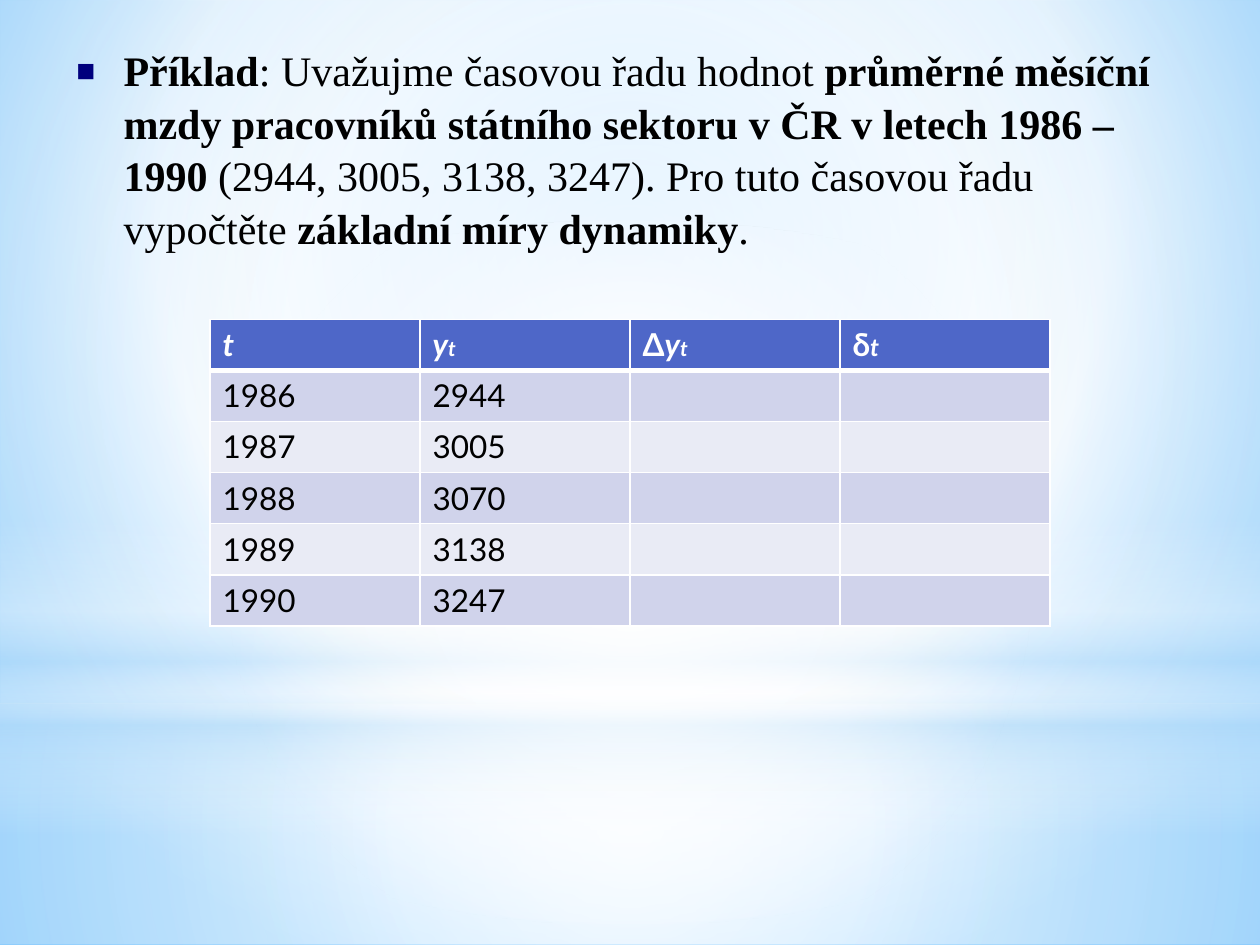
from lxml import etree
from pptx import Presentation
from pptx.dml.color import RGBColor
from pptx.enum.shapes import MSO_SHAPE
from pptx.oxml import parse_xml
from pptx.oxml.ns import nsdecls, qn
from pptx.util import Pt

RECT = MSO_SHAPE.RECTANGLE
OVAL = MSO_SHAPE.OVAL
WHITE = RGBColor(0xFF, 0xFF, 0xFF)
BLACK = RGBColor(0, 0, 0)
NAVY = RGBColor(0, 0, 0x7D)
BLUE = RGBColor(0x4E, 0x67, 0xC8)
DARK = RGBColor(0xD0, 0xD3, 0xEB)
LIGHT = RGBColor(0xE9, 0xEB, 0xF5)
PALE = RGBColor(0xB4, 0xDC, 0xFA)
SKY = RGBColor(0x9E, 0xD5, 0xFF)
DEEP = RGBColor(0x5B, 0xB9, 0xFF)
MID = (50, 50, 50, 50)

INTRO = [
    ("Příklad", True),
    (": Uvažujme časovou řadu hodnot ", False),
    ("průměrné měsíční mzdy pracovníků státního sektoru v ČR v letech 1986 – 1990 ", True),
    ("(2944, 3005, 3138, 3247). Pro tuto časovou řadu vypočtěte ", False),
    ("základní míry dynamiky", True),
    (".", False),
]
HEADS = [
    [("t", 18, True)],
    [("y", 18, True), ("t", 12, True)],
    [("Δ", 18, False), ("y", 18, True), ("t", 12, True)],
    [("δ", 18, False), ("t", 14, True)],
]
WAGES = [(1986, 2944), (1987, 3005), (1988, 3070), (1989, 3138), (1990, 3247)]


class Deck:
    serif = "Times New Roman"
    sans = "Lato"

    def __init__(self):
        self.prs = Presentation()
        self.prs.slide_width, self.prs.slide_height = Pt(720), Pt(540)
        self.slide = self.prs.slides.add_slide(self.prs.slide_layouts[6])

    def blend(self, owner, stops, focus=None):
        marks = "".join(
            f'<a:gs pos="{pos * 1000}"><a:srgbClr val="{color}">'
            f'<a:alpha val="{alpha * 1000}"/></a:srgbClr></a:gs>'
            for pos, color, alpha in stops)
        if focus:
            sides = " ".join(f'{side}="{val * 1000}"' for side, val in zip("ltrb", focus))
            way = f'<a:path path="circle"><a:fillToRect {sides}/></a:path>'
        else:
            way = '<a:lin ang="5400000" scaled="0"/>'
        grad = parse_xml(f'<a:gradFill {nsdecls("a")} rotWithShape="1">'
                         f'<a:gsLst>{marks}</a:gsLst>{way}</a:gradFill>')
        owner.replace(owner.find(qn("a:solidFill")), grad)

    def back(self, stops, focus):
        self.slide.background.fill.solid()
        self.slide.background.fill.fore_color.rgb = WHITE
        self.blend(self.slide.element.find(".//" + qn("p:bgPr")), stops, focus)

    def glow(self, kind, top, height, stops, focus=None):
        shape = self.slide.shapes.add_shape(kind, 0, Pt(top), Pt(720), Pt(height))
        shape.shadow.inherit = False
        shape.line.fill.background()
        shape.fill.solid()
        shape.fill.fore_color.rgb = WHITE
        self.blend(shape.element.spPr, stops, focus)

    def style(self, run, size, color, face, bold=False, slant=False):
        font = run.font
        font.name, font.size, font.color.rgb = face, Pt(size), color
        font.bold, font.italic = bold, slant

    def bullet(self, left, top, width, height, parts):
        box = self.slide.shapes.add_textbox(Pt(left), Pt(top), Pt(width), Pt(height))
        frame = box.text_frame
        frame.word_wrap = True
        para = frame.paragraphs[0]
        para.line_spacing, para.space_before = 1.04, Pt(4.8)
        for text, bold in parts:
            run = para.add_run()
            run.text = text
            self.style(run, 24, BLACK, self.serif, bold)
        props = para._p.get_or_add_pPr()
        props.set("marL", str(Pt(27)))
        props.set("indent", str(-Pt(27)))
        tint = etree.SubElement(props, qn("a:buClr"))
        etree.SubElement(tint, qn("a:srgbClr"), val=str(NAVY))
        etree.SubElement(props, qn("a:buSzPct"), val="75000")
        etree.SubElement(props, qn("a:buFont"), typeface="Arial")
        etree.SubElement(props, qn("a:buChar"), char="■")

    def cell(self, cell, parts, fill, color, bold, upper, lower):
        cell.fill.solid()
        cell.fill.fore_color.rgb = fill
        para = cell.text_frame.paragraphs[0]
        for text, size, slant in parts:
            run = para.add_run()
            run.text = text
            self.style(run, size, color, self.sans, bold, slant)
        props = cell._tc.get_or_add_tcPr()
        for spot, (side, width) in enumerate(zip("LRTB", (1, 1, upper, lower))):
            props.insert(spot, parse_xml(
                f'<a:ln{side} {nsdecls("a")} w="{Pt(width)}"><a:solidFill>'
                f'<a:srgbClr val="{WHITE}"/></a:solidFill></a:ln{side}>'))

    def table(self, left, top, width, height, heads, rows):
        grid = self.slide.shapes.add_table(
            len(rows) + 1, len(heads), Pt(left), Pt(top), Pt(width), Pt(height)).table
        for col, parts in enumerate(heads):
            self.cell(grid.cell(0, col), parts, BLUE, WHITE, True, 1, 3)
        for row, vals in enumerate(rows, 1):
            fill = DARK if row % 2 else LIGHT
            for col in range(len(heads)):
                parts = [(str(val), 18, False) for val in vals[col:col + 1]]
                self.cell(grid.cell(row, col), parts, fill, BLACK, False,
                          3 if row == 1 else 1, 1)


def main():
    deck = Deck()
    deck.back([(0, SKY, 100), (60, WHITE, 100), (100, DEEP, 100)], (20, 10, 20, 60))
    deck.glow(RECT, 402, 138, [(0, WHITE, 91), (37, WHITE, 76), (100, PALE, 79)], MID)
    deck.glow(RECT, 0, 402, [(0, WHITE, 89), (48, WHITE, 62), (100, PALE, 79)], MID)
    deck.glow(RECT, 297, 180, [(0, WHITE, 0), (29, WHITE, 30), (45, PALE, 40),
                               (55, WHITE, 26), (65, PALE, 60), (100, WHITE, 0)])
    deck.glow(OVAL, 126, 402, [(0, WHITE, 100), (56, WHITE, 0)], MID)
    deck.bullet(36.5, 21, 657.5, 510.5, INTRO)
    deck.table(120, 182.5, 480, 175.2, HEADS, WAGES)
    deck.prs.save("out.pptx")


if __name__ == "__main__":
    main()
